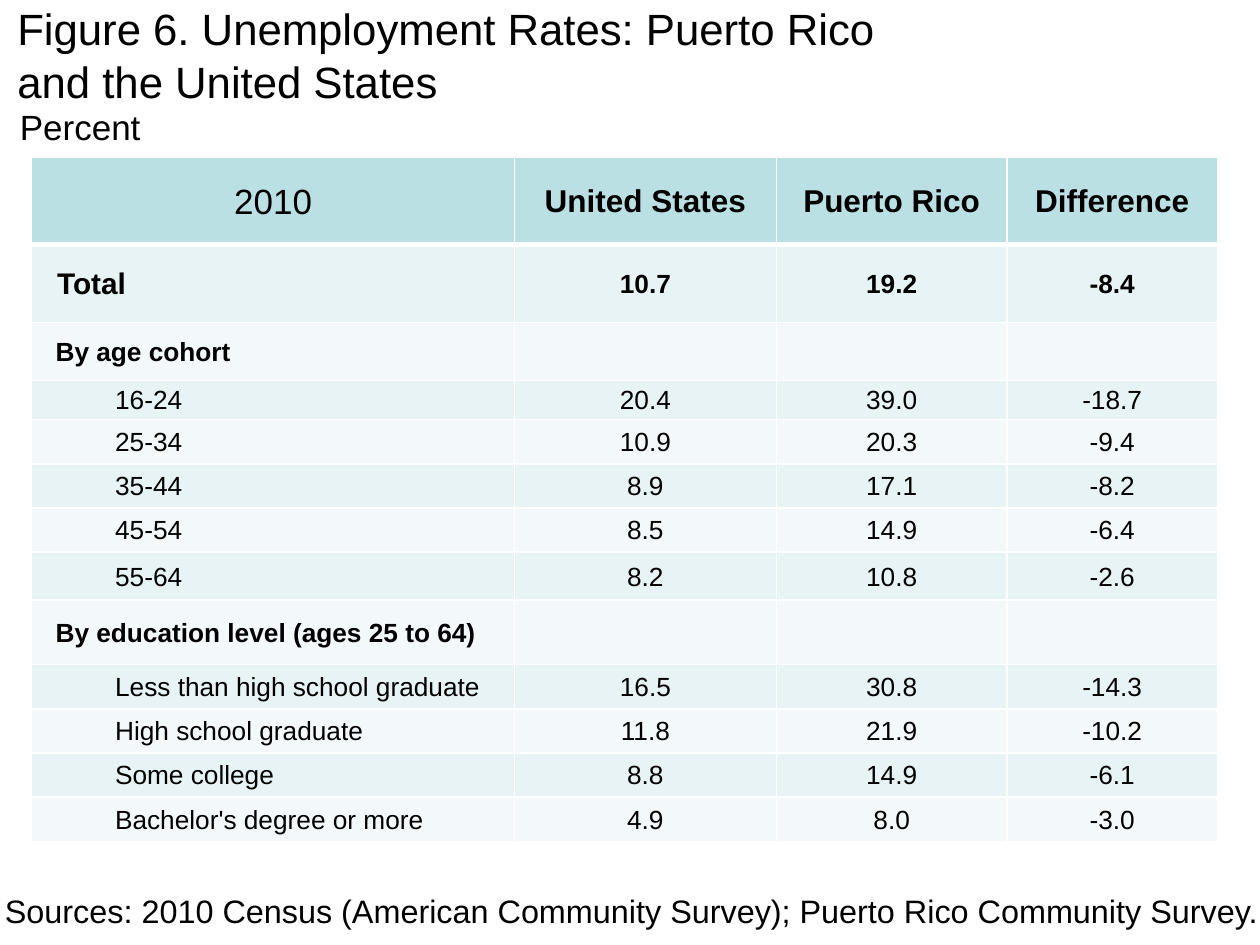
from lxml import etree
from pptx import Presentation
from pptx.dml.color import RGBColor
from pptx.enum.text import MSO_ANCHOR, PP_ALIGN
from pptx.oxml.ns import qn
from pptx.util import Cm, Pt

BLACK = RGBColor(0x00, 0x00, 0x00)
WHITE = RGBColor(0xFF, 0xFF, 0xFF)
HEADER_FILL = RGBColor(0xBB, 0xE0, 0xE3)
BAND_FILLS = [RGBColor(0xF3, 0xF9, 0xFA), RGBColor(0xE7, 0xF3, 0xF4)]

# Row kind: height, label indent, label size, value size, label bold, value bold
ROW_STYLES = {
    "header": (1.75, 0.25, 20, 18, False, True),
    "total": (1.57, 0.51, 17, 15, True, True),
    "group": (1.17, 0.48, 15, 15, True, True),
    "item": (0.89, 1.68, 15, 15, False, False),
}
ROWS = [
    ("header", "2010", "United States", "Puerto Rico", "Difference"),
    ("total", "Total", "10.7", "19.2", "-8.4"),
    ("group", "By age cohort", "", "", ""),
    ("item", "16-24", "20.4", "39.0", "-18.7"),
    ("item", "25-34", "10.9", "20.3", "-9.4"),
    ("item", "35-44", "8.9", "17.1", "-8.2"),
    ("item", "45-54", "8.5", "14.9", "-6.4"),
    ("item", "55-64", "8.2", "10.8", "-2.6"),
    ("group", "By education level (ages 25 to 64)", "", "", ""),
    ("item", "Less than high school graduate", "16.5", "30.8", "-14.3"),
    ("item", "High school graduate", "11.8", "21.9", "-10.2"),
    ("item", "Some college", "8.8", "14.9", "-6.1"),
    ("item", "Bachelor's degree or more", "4.9", "8.0", "-3.0"),
]
SPECIAL_HEIGHTS = {"16-24": 0.79, "55-64": 0.97, "By education level (ages 25 to 64)": 1.3}
COLUMN_WIDTHS = [9.73, 5.28, 4.65, 4.24]


def write_text(text_frame, text, size, bold=False, align=PP_ALIGN.LEFT):
    """Write each line of text as its own paragraph."""
    for index, line in enumerate(text.split("\n")):
        paragraph = text_frame.paragraphs[0] if index == 0 else text_frame.add_paragraph()
        paragraph.alignment = align
        paragraph.font.size = Pt(size)
        if not line:
            continue
        run = paragraph.add_run()
        run.text = line
        run.font.name = "Arial"
        run.font.size = Pt(size)
        run.font.bold = bold
        run.font.color.rgb = BLACK


def set_borders(cell, bottom_width):
    """Draw white cell borders; they must precede the fill in the cell's XML."""
    properties = cell._tc.get_or_add_tcPr()
    widths = {"a:lnL": 1, "a:lnR": 1, "a:lnT": 1, "a:lnB": bottom_width}
    for position, (tag, width) in enumerate(widths.items()):
        line = etree.Element(qn(tag), w=str(Pt(width)))
        fill = etree.SubElement(line, qn("a:solidFill"))
        etree.SubElement(fill, qn("a:srgbClr"), val=str(WHITE))
        properties.insert(position, line)


presentation = Presentation()
presentation.slide_width = Cm(25.4)
presentation.slide_height = Cm(19.05)
slide = presentation.slides.add_slide(presentation.slide_layouts[6])

heights = [SPECIAL_HEIGHTS.get(row[1], ROW_STYLES[row[0]][0]) for row in ROWS]
table = slide.shapes.add_table(
    len(ROWS), len(COLUMN_WIDTHS), Cm(0.64), Cm(3.18),
    Cm(sum(COLUMN_WIDTHS)), Cm(sum(heights)),
).table
for column, width in zip(table.columns, COLUMN_WIDTHS):
    column.width = Cm(width)

for row_index, (kind, *texts) in enumerate(ROWS):
    _, indent, label_size, value_size, label_bold, value_bold = ROW_STYLES[kind]
    is_header = kind == "header"
    table.rows[row_index].height = Cm(heights[row_index])
    for column_index, text in enumerate(texts):
        is_label = column_index == 0
        cell = table.cell(row_index, column_index)
        cell.fill.solid()
        cell.fill.fore_color.rgb = HEADER_FILL if is_header else BAND_FILLS[row_index % 2]
        cell.vertical_anchor = MSO_ANCHOR.MIDDLE
        cell.margin_left = Cm(indent if is_label else 0.03)
        cell.margin_right = Cm(indent if is_label and is_header else 0.03)
        cell.margin_top = Cm(0.03)
        cell.margin_bottom = Cm(0)
        write_text(
            cell.text_frame, text,
            size=label_size if is_label else value_size,
            bold=label_bold if is_label else value_bold,
            align=PP_ALIGN.LEFT if is_label and not is_header else PP_ALIGN.CENTER,
        )
        set_borders(cell, bottom_width=3 if is_header else 1)

TEXT_BOXES = [
    (0.1, -0.08, 26.24, 2.39, 25,
     "Figure 6. Unemployment Rates: Puerto Rico\nand the United States"),
    (-0.15, 17.83, 26.24, 1.04, 18.5,
     "Sources: 2010 Census (American Community Survey); Puerto Rico Community Survey."),
    (0.15, 2.01, 12.07, 1.12, 20, "Percent"),
]
for left, top, width, height, size, text in TEXT_BOXES:
    text_box = slide.shapes.add_textbox(Cm(left), Cm(top), Cm(width), Cm(height))
    text_box.text_frame.word_wrap = True
    write_text(text_box.text_frame, text, size=size)

presentation.save("out.pptx")
